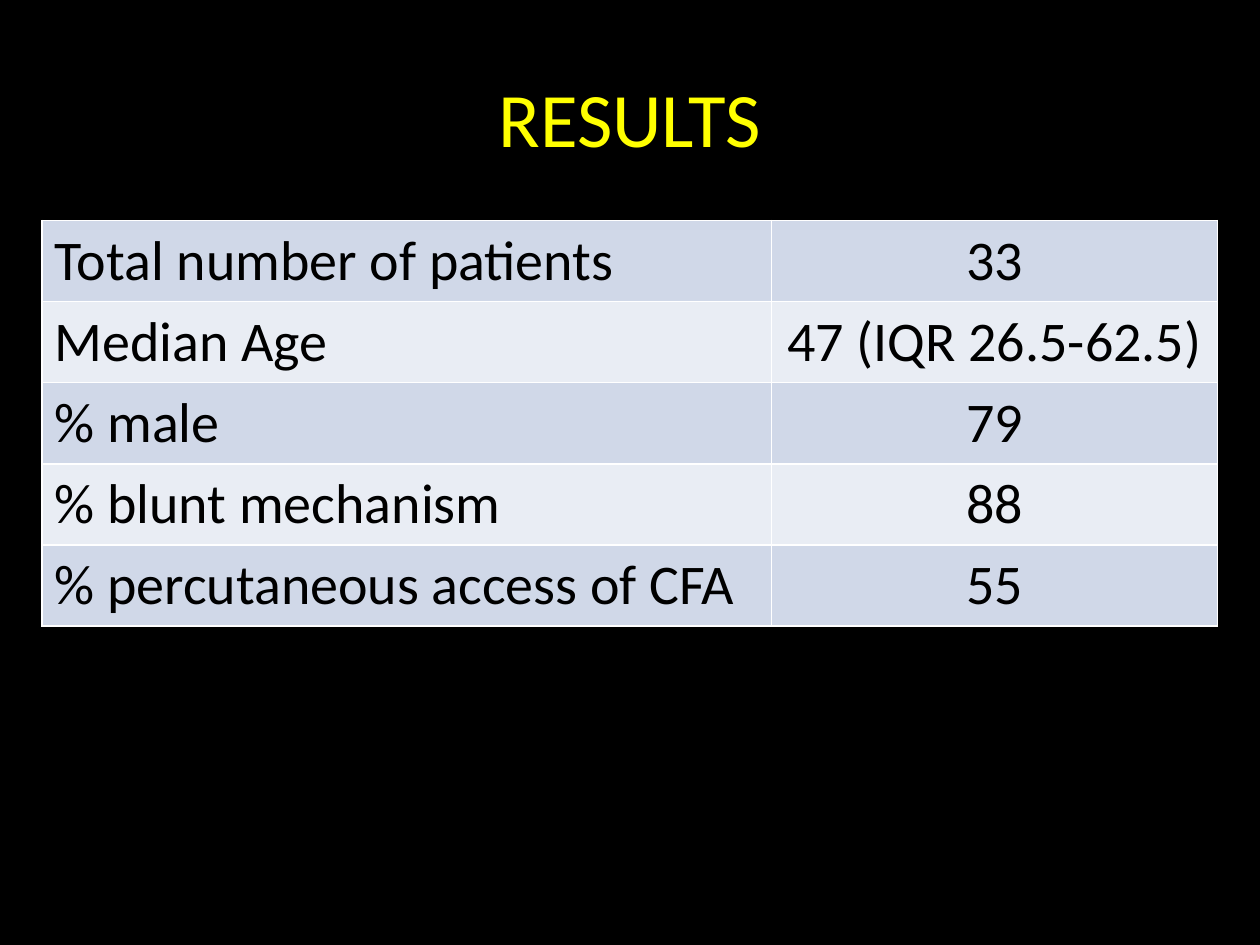
from lxml.etree import SubElement
from pptx import Presentation
from pptx.dml.color import RGBColor
from pptx.enum.text import MSO_ANCHOR, PP_ALIGN
from pptx.oxml.ns import qn
from pptx.util import Pt

BLACK = RGBColor(0x00, 0x00, 0x00)
WHITE = RGBColor(0xFF, 0xFF, 0xFF)
YELLOW = RGBColor(0xFF, 0xFF, 0x00)
BAND_DARK = RGBColor(0xD0, 0xD8, 0xE8)
BAND_LIGHT = RGBColor(0xE9, 0xED, 0xF4)
FONT = "Calibri"

RESULTS = [
    ("Total number of patients", "33"),
    ("Median Age", "47 (IQR 26.5-62.5)"),
    ("% male", "79"),
    ("% blunt mechanism", "88"),
    ("% percutaneous access of CFA", "55"),
]
COLUMN_WIDTHS = (416.9, 254.9)
COLUMN_ALIGNMENTS = (PP_ALIGN.LEFT, PP_ALIGN.CENTER)
ROW_HEIGHT = 45.65


def write(frame, text, size, color, alignment):
    paragraph = frame.paragraphs[0]
    paragraph.alignment = alignment
    run = paragraph.add_run()
    run.text = text
    run.font.name = FONT
    run.font.size = Pt(size)
    run.font.color.rgb = color


def add_title(slide, text):
    title = slide.shapes.title
    title.left, title.top = Pt(36), Pt(21.6)
    title.width, title.height = Pt(648), Pt(90)
    title.text_frame.vertical_anchor = MSO_ANCHOR.MIDDLE
    write(title.text_frame, text, 44, YELLOW, PP_ALIGN.CENTER)


def add_borders(cell, color, width):
    """Draw all four cell borders; call before filling, as the schema wants."""
    properties = cell._tc.get_or_add_tcPr()
    for side in ("a:lnL", "a:lnR", "a:lnT", "a:lnB"):
        border = SubElement(properties, qn(side), w=str(Pt(width)))
        fill = SubElement(border, qn("a:solidFill"))
        SubElement(fill, qn("a:srgbClr"), val=str(color))


def add_results_table(slide):
    table = slide.shapes.add_table(
        len(RESULTS), len(COLUMN_WIDTHS), Pt(24), Pt(126),
        Pt(sum(COLUMN_WIDTHS)), Pt(ROW_HEIGHT * len(RESULTS)),
    ).table
    table.first_row = False
    for column, width in zip(table.columns, COLUMN_WIDTHS):
        column.width = Pt(width)
    for index, (row, values) in enumerate(zip(table.rows, RESULTS)):
        row.height = Pt(ROW_HEIGHT)
        for cell, value, alignment in zip(row.cells, values, COLUMN_ALIGNMENTS):
            add_borders(cell, WHITE, 1)
            cell.fill.solid()
            cell.fill.fore_color.rgb = BAND_LIGHT if index % 2 else BAND_DARK
            write(cell.text_frame, value, 32, BLACK, alignment)


def main():
    presentation = Presentation()
    presentation.slide_width, presentation.slide_height = Pt(720), Pt(540)
    slide = presentation.slides.add_slide(presentation.slide_layouts[5])
    slide.background.fill.solid()
    slide.background.fill.fore_color.rgb = BLACK
    add_title(slide, "RESULTS")
    add_results_table(slide)
    presentation.save("out.pptx")


if __name__ == "__main__":
    main()
